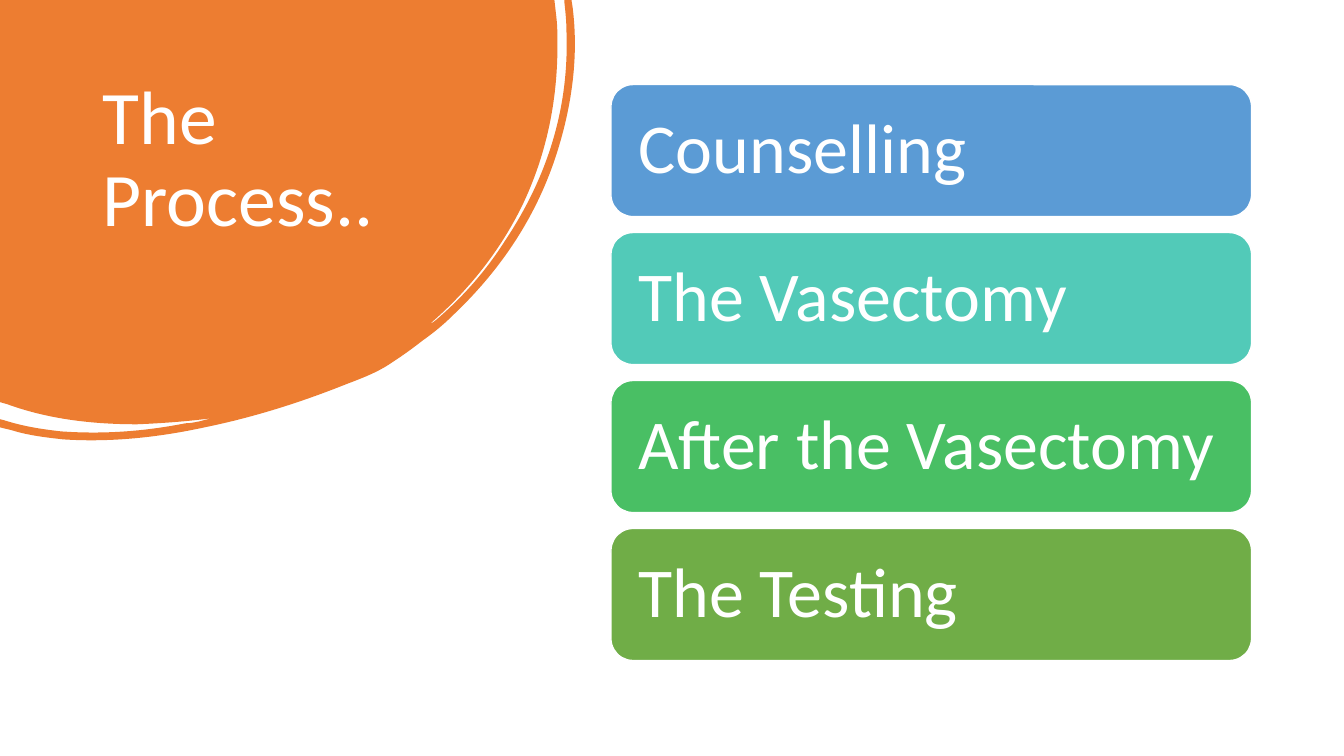
from lxml import etree
from pptx import Presentation
from pptx.dml.color import RGBColor
from pptx.enum.shapes import MSO_SHAPE
from pptx.enum.text import MSO_ANCHOR, PP_ALIGN
from pptx.oxml.ns import qn
from pptx.util import Pt

ROUNDED = MSO_SHAPE.ROUNDED_RECTANGLE
TOP, MIDDLE = MSO_ANCHOR.TOP, MSO_ANCHOR.MIDDLE
LEFT = PP_ALIGN.LEFT

WHITE = RGBColor(0xFF, 0xFF, 0xFF)
ORANGE = RGBColor(0xED, 0x7D, 0x31)
BLUE = RGBColor(0x5B, 0x9B, 0xD5)
TEAL = RGBColor(0x52, 0xCA, 0xB8)
GREEN = RGBColor(0x49, 0xBF, 0x64)
OLIVE = RGBColor(0x70, 0xAD, 0x47)


def write_text(box, text, size, anchor, inset_x, inset_y):
    frame = box.text_frame
    frame.word_wrap = True
    frame.vertical_anchor = anchor
    frame.margin_left = frame.margin_right = Pt(inset_x)
    frame.margin_top = frame.margin_bottom = Pt(inset_y)
    para = frame.paragraphs[0]
    para.alignment = LEFT
    para.line_spacing = 0.9
    span = para.add_run()
    span.text = text
    span.font.name = "Calibri"
    span.font.size = Pt(size)
    span.font.color.rgb = WHITE


deck = Presentation()
deck.slide_width, deck.slide_height = Pt(960), Pt(540)
page = deck.slides.add_slide(deck.slide_layouts[6])

# Orange blob with its brushed rim: one point is a line, three are a curve
BLOB_WIDTH, BLOB_HEIGHT = 411.1, 314.6
UNITS = 10  # outline units per point
BLOB = [
    [(396, 0)],
    [(397.4, 12.2)],
    [(398.2, 18.7), (398.2, 25.9), (398.2, 32.4)],
    [(398.2, 72.7), (390.2, 110.9), (373, 146.9)],
    [(357.1, 179.3), (334.8, 207.4), (307.4, 231.1)],
    [(308.9, 231.1), (309.6, 229.7), (311, 229)],
    [(330.5, 212.4), (347, 193.7), (360.7, 172.1)],
    [(391, 126.7), (406.8, 77), (404.6, 21.6)],
    [(404.6, 15.1), (403.9, 8.6), (403.2, 2.2)],
    [(403.2, 0)],
    [(408.2, 0)],
    [(409, 5)],
    [(413.3, 38.9), (409, 73.4), (398.2, 108)],
    [(383.8, 154.1), (357.8, 193), (322.6, 226.1)],
    [(316.1, 232.6), (308.9, 238.3), (301.7, 243.4)],
    [(294.5, 249.1), (287.3, 254.2), (278.6, 259.9)],
    [(270, 265.7), (259.2, 270), (247.7, 274.3)],
    [(215.3, 287.3), (181.4, 298.1), (146.2, 305.3)],
    [(113, 312.5), (79.2, 316.1), (45.4, 313.9)],
    [(32.4, 312.5), (20.2, 311), (8.6, 307.4)],
    [(0, 305.3)],
    [(0, 299.5)],
    [(2.9, 300.2)],
    [(16.6, 304.6), (30.2, 306.7), (43.9, 308.2)],
    [(74.2, 310.3), (103, 308.2), (132.5, 302.4)],
    [(136.1, 302.4), (139, 301.7), (142.6, 301)],
    [(145.4, 300.2), (148.3, 299.5), (151.2, 298.8)],
    [(133.9, 301), (115.9, 302.4), (97.9, 303.1)],
    [(66.2, 303.1), (34.6, 299.5), (5, 288.7)],
    [(0, 287.3)],
]
builder = page.shapes.build_freeform(0, 0, scale=Pt(1) / UNITS)
ends = [(x * UNITS, y * UNITS) for x, y in (segment[-1] for segment in BLOB)]
builder.add_line_segments(ends, close=True)
blob = builder.convert_to_shape()
blob.shadow.inherit = False
blob.fill.solid()
blob.fill.fore_color.rgb = ORANGE
blob.line.fill.background()

# Bend the outline's sides into curves
outline = next(blob.element.iter(qn("a:path")))
for side, segment in zip(outline.findall(qn("a:lnTo")), BLOB):
    if len(segment) == 3:
        curve = etree.Element(qn("a:cubicBezTo"))
        for x, y in segment:
            etree.SubElement(curve, qn("a:pt"), x=str(round(x * UNITS)),
                             y=str(round(y * UNITS)))
        outline.replace(side, curve)
outline.set("w", str(round(BLOB_WIDTH * UNITS)))
outline.set("h", str(round(BLOB_HEIGHT * UNITS)))
blob.width, blob.height = Pt(BLOB_WIDTH), Pt(BLOB_HEIGHT)

# Title
title = page.shapes.add_textbox(Pt(66.2), Pt(53.3), Pt(253.4), Pt(159.8))
write_text(title, "The Process..", size=54, anchor=TOP, inset_x=7.2, inset_y=3.6)

# Stack of process steps
STEPS = [
    ("Counselling", BLUE),
    ("The Vasectomy", TEAL),
    ("After the Vasectomy", GREEN),
    ("The Testing", OLIVE),
]
BAR_TOP, BAR_PITCH = 60.4, 105.7
for index, (label, color) in enumerate(STEPS):
    bar = page.shapes.add_shape(ROUNDED, Pt(436.4), Pt(BAR_TOP + index * BAR_PITCH),
                                Pt(457.6), Pt(94.3))
    bar.shadow.inherit = False
    bar.fill.solid()
    bar.fill.fore_color.rgb = color
    bar.line.color.rgb = WHITE
    bar.line.width = Pt(1)
    write_text(bar, label, size=50, anchor=MIDDLE, inset_x=15, inset_y=10)

deck.save("out.pptx")
